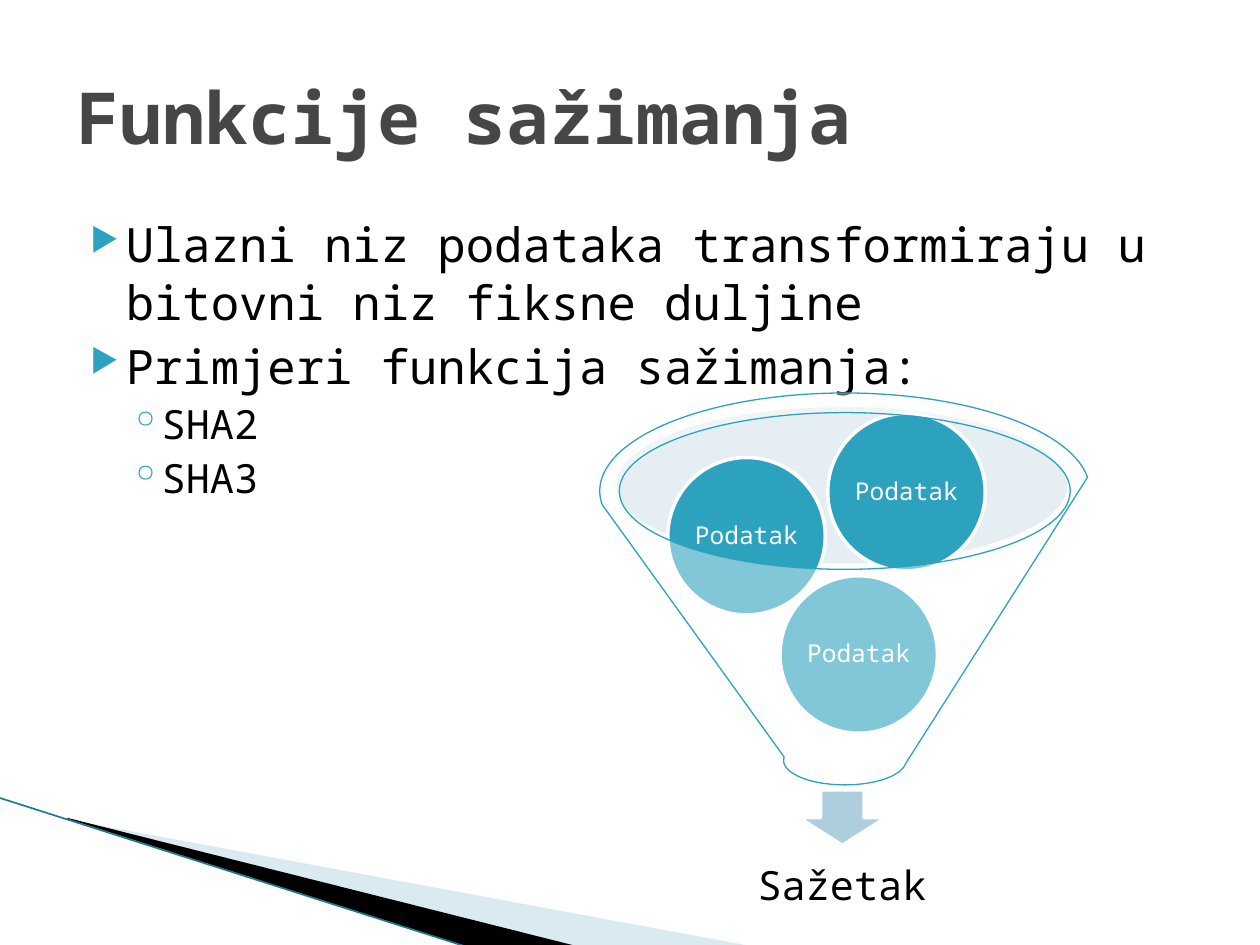
import pptx
import pptx.dml.color
import pptx.enum.shapes
import pptx.enum.text
import pptx.util
from lxml import etree
from pptx.oxml.ns import qn

Pt = pptx.util.Pt
RGBColor = pptx.dml.color.RGBColor
SHAPE = pptx.enum.shapes.MSO_SHAPE
ALIGN = pptx.enum.text.PP_ALIGN
ANCHOR = pptx.enum.text.MSO_ANCHOR

FONT = "Noto Sans Mono"
TEAL = RGBColor(0x2D, 0xA2, 0xBF)
DARK_TEAL = RGBColor(0x21, 0x79, 0x8F)
PALE_BLUE = RGBColor(0xA0, 0xCB, 0xDC)
MOUTH_BLUE = RGBColor(0xBE, 0xD7, 0xE2)
ARROW_BLUE = RGBColor(0xAD, 0xCE, 0xDC)
GREY = RGBColor(0x46, 0x46, 0x46)
BLACK = RGBColor(0, 0, 0)
WHITE = RGBColor(0xFF, 0xFF, 0xFF)


def write(paragraph, text, size=14, color=BLACK, bold=False, align=ALIGN.LEFT,
          spacing=None, before=0):
    """Put one formatted run into a paragraph."""
    paragraph.alignment = align
    paragraph.space_before = Pt(before)
    if spacing:
        paragraph.line_spacing = spacing
    run = paragraph.add_run()
    run.text = text
    run.font.name = FONT
    run.font.size = Pt(size)
    run.font.bold = bold
    run.font.color.rgb = color


def add_bullet(paragraph, char, percent, left, hanging):
    properties = paragraph._p.get_or_add_pPr()
    properties.set("marL", str(Pt(left)))
    properties.set("indent", str(-Pt(hanging)))
    color = etree.SubElement(properties, qn("a:buClr"))
    etree.SubElement(color, qn("a:srgbClr"), val=str(TEAL))
    etree.SubElement(properties, qn("a:buSzPct"), val=str(percent * 1000))
    etree.SubElement(properties, qn("a:buChar"), char=char)


class SlideBuilder:
    def __init__(self, slide):
        self.slide = slide

    def paint(self, shape, fill, opacity=100, line=None, weight=1):
        shape.shadow.inherit = False
        shape.fill.solid()
        shape.fill.fore_color.rgb = fill
        if opacity < 100:
            color = shape._element.spPr.find(qn("a:solidFill"))[0]
            etree.SubElement(color, qn("a:alpha"), val=str(opacity * 1000))
        if line is None:
            shape.line.fill.background()
        else:
            shape.line.color.rgb = line
            shape.line.width = Pt(weight)
        return shape

    def shape(self, kind, left, top, width, height, **look):
        shape = self.slide.shapes.add_shape(
            kind, Pt(left), Pt(top), Pt(width), Pt(height))
        return self.paint(shape, **look)

    def outline(self, points, **look):
        corners = [(Pt(x), Pt(y)) for x, y in points]
        builder = self.slide.shapes.build_freeform(*corners[0])
        builder.add_line_segments(corners[1:], close=True)
        return self.paint(builder.convert_to_shape(), **look)

    def line(self, x1, y1, x2, y2, color, weight):
        line = self.slide.shapes.add_connector(
            pptx.enum.shapes.MSO_CONNECTOR.STRAIGHT,
            Pt(x1), Pt(y1), Pt(x2), Pt(y2))
        line.line.color.rgb = color
        line.line.width = Pt(weight)
        etree.SubElement(line._element.spPr, qn("a:effectLst"))

    def text_box(self, left, top, width, height, anchor=ANCHOR.MIDDLE):
        box = self.slide.shapes.add_textbox(
            Pt(left), Pt(top), Pt(width), Pt(height))
        box.text_frame.word_wrap = True
        box.text_frame.vertical_anchor = anchor
        return box.text_frame

    def data_ball(self, left, top, label):
        ball = self.shape(SHAPE.OVAL, left, top, 90, 90,
                          fill=TEAL, line=WHITE, weight=2)
        frame = ball.text_frame
        frame.word_wrap = False
        frame.vertical_anchor = ANCHOR.MIDDLE
        frame.margin_left = frame.margin_right = Pt(1.4)
        frame.margin_top = frame.margin_bottom = Pt(1.4)
        write(frame.paragraphs[0], label, color=WHITE,
              align=ALIGN.CENTER, spacing=0.9)


def main():
    deck = pptx.Presentation()
    deck.slide_width, deck.slide_height = Pt(720), Pt(540)
    page = SlideBuilder(deck.slides.add_slide(deck.slide_layouts[6]))

    # Corner decoration
    page.outline([(39.6, 468.5), (428.4, 540.5), (328.3, 540.5), (39.6, 468)],
                 fill=PALE_BLUE, opacity=40)
    page.outline([(38.2, 467.3), (329, 540.5), (267.8, 541.2), (38.9, 468)],
                 fill=BLACK)
    page.line(-0.7, 455.8, 267.1, 541.2, DARK_TEAL, 0.95)

    # Bulleted text
    points = page.text_box(36, 116.6, 648, 356.4, anchor=ANCHOR.TOP)
    points.margin_top = Pt(6.5)
    levels = [
        dict(char="▶", percent=68, left=28.8, hanging=20.2),
        dict(char="◦", percent=100, left=49, hanging=18),
    ]
    formats = [
        dict(size=27, spacing=Pt(32.6), before=4),
        dict(size=23, spacing=Pt(27.7), before=3.2),
    ]
    entries = [
        (0, "Ulazni niz podataka transformiraju u bitovni niz fiksne duljine"),
        (0, "Primjeri funkcija sažimanja:"),
        (1, "SHA2"),
        (1, "SHA3"),
    ]
    for index, (level, text) in enumerate(entries):
        paragraph = points.add_paragraph() if index else points.paragraphs[0]
        paragraph.level = level
        add_bullet(paragraph, **levels[level])
        write(paragraph, text, **formats[level])
    points.paragraphs[0].space_before = Pt(0)

    # Title
    title = page.text_box(36.7, 20.9, 648, 90)
    write(title.paragraphs[0], "Funkcije sažimanja",
          size=41, color=GREY, bold=True)

    # Funnel mouth, outlet arrow and result
    page.shape(SHAPE.OVAL, 352.1, 232.6, 257.8, 89.3,
               fill=MOUTH_BLUE, opacity=40)
    page.shape(SHAPE.DOWN_ARROW, 456.5, 451.4, 49.7, 31.7,
               fill=ARROW_BLUE, line=WHITE, weight=2)
    digest = page.text_box(361.4, 477.4, 239.8, 59.8)
    write(digest.paragraphs[0], "Sažetak", size=23,
          align=ALIGN.CENTER, spacing=0.9)

    # Data falling through the funnel, which lies over them
    for left, top in [(445.7, 329), (381.6, 261.4), (473, 236.2)]:
        page.data_ball(left, top, "Podatak")
    page.shape(SHAPE.FUNNEL, 342.7, 224.6, 280.1, 223.9,
               fill=WHITE, opacity=40, line=TEAL, weight=0.75)

    deck.save("out.pptx")


if __name__ == "__main__":
    main()
